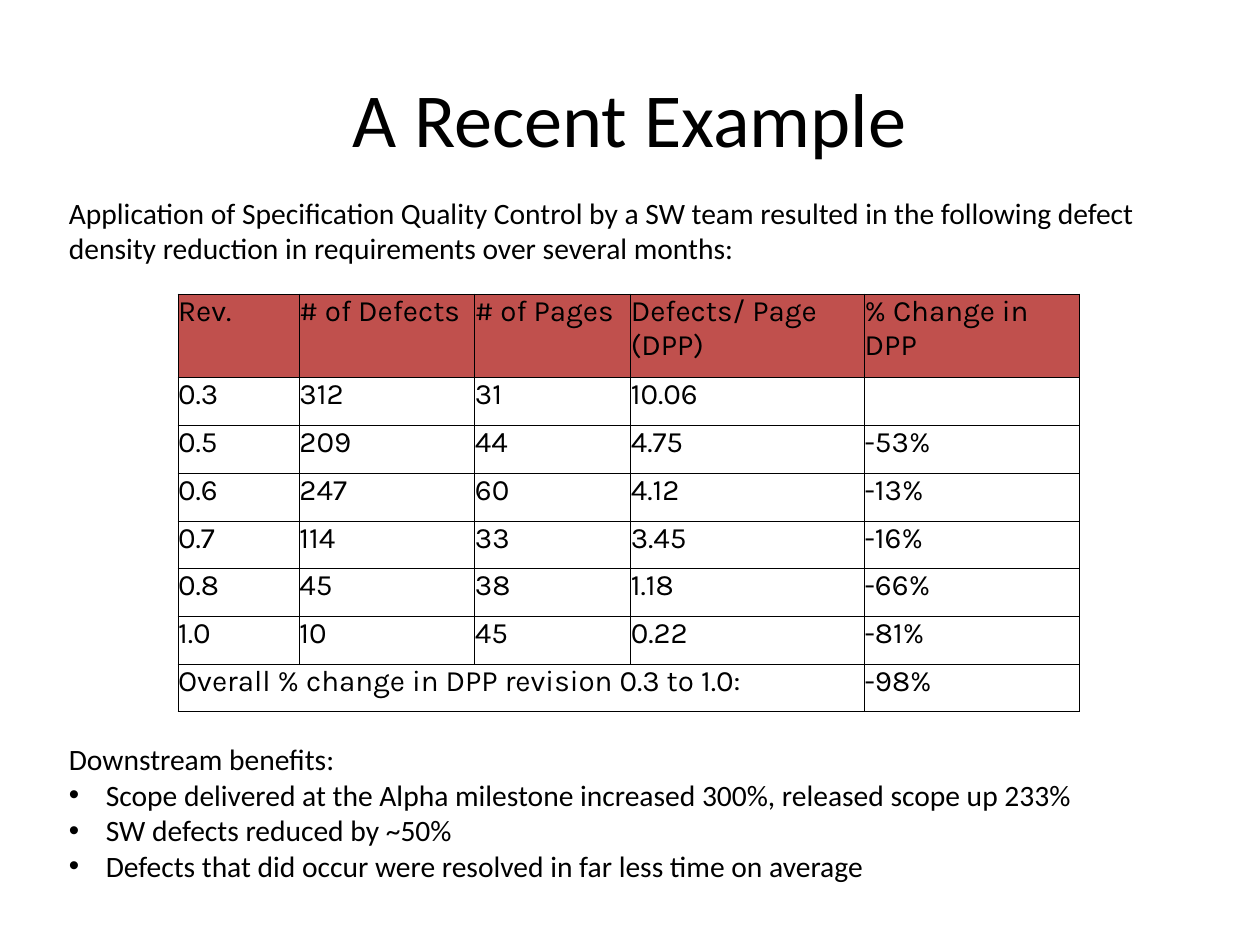
from lxml import etree
from pptx import Presentation
from pptx.dml.color import RGBColor
from pptx.enum import text
from pptx.oxml import ns
from pptx.util import Pt

BLACK = RGBColor(0x00, 0x00, 0x00)
RED = RGBColor(0xC0, 0x50, 0x4D)
WHITE = RGBColor(0xFF, 0xFF, 0xFF)

COLUMN_WIDTHS = [98.6, 142.6, 126.7, 190.1, 174.2]
HEADER_HEIGHT = 68.2
ROW_HEIGHT = 38.78
ROWS = [
    ["Rev.", "# of Defects", "# of Pages", "Defects/ Page (DPP)", "% Change in DPP"],
    ["0.3", "312", "31", "10.06", ""],
    ["0.5", "209", "44", "4.75", "-53%"],
    ["0.6", "247", "60", "4.12", "-13%"],
    ["0.7", "114", "33", "3.45", "-16%"],
    ["0.8", "45", "38", "1.18", "-66%"],
    ["1.0", "10", "45", "0.22", "-81%"],
    ["Overall % change in DPP revision 0.3 to 1.0:", "", "", "", "-98%"],
]
INTRO = ("Application of Specification Quality Control by a SW team resulted in "
         "the following defect density reduction in requirements over several months:")
BENEFITS = [
    "Scope delivered at the Alpha milestone increased 300%, released scope up 233%",
    "SW defects reduced by ~50%",
    "Defects that did occur were resolved in far less time on average",
]


def add_run(p, words, size=24, name="Calibri"):
    r = p.add_run()
    r.text = words
    r.font.size = Pt(size)
    r.font.name = name
    r.font.color.rgb = BLACK


def set_insets(frame, inset):
    frame.margin_left = frame.margin_right = Pt(inset)
    frame.margin_top = frame.margin_bottom = Pt(inset)


def add_bullet(p):
    pPr = p._p.get_or_add_pPr()
    pPr.set("marL", str(Pt(30)))
    pPr.set("indent", str(Pt(-30)))
    etree.SubElement(pPr, ns.qn("a:buFont"), typeface="Arial")
    etree.SubElement(pPr, ns.qn("a:buChar"), char="•")


def set_borders(cell):
    tcPr = cell._tc.get_or_add_tcPr()
    for i, side in enumerate(["lnL", "lnR", "lnT", "lnB"]):
        ln = etree.Element(ns.qn(f"a:{side}"), w=str(Pt(1)))
        fill = etree.SubElement(ln, ns.qn("a:solidFill"))
        etree.SubElement(fill, ns.qn("a:srgbClr"), val=str(BLACK))
        tcPr.insert(i, ln)


def place_title(s, left, top, width, height):
    sp = s.shapes.title
    sp.left, sp.top, sp.width, sp.height = Pt(left), Pt(top), Pt(width), Pt(height)
    tf = sp.text_frame
    set_insets(tf, 5)
    tf.vertical_anchor = text.MSO_ANCHOR.MIDDLE
    p = tf.paragraphs[0]
    p.alignment = text.PP_ALIGN.CENTER
    add_run(p, "A Recent Example", 62)


def add_text(s, left, top, width, height, lead, bullets=()):
    sp = s.shapes.add_textbox(Pt(left), Pt(top), Pt(width), Pt(height))
    tf = sp.text_frame
    tf.word_wrap = True
    tf.auto_size = text.MSO_AUTO_SIZE.SHAPE_TO_FIT_TEXT
    set_insets(tf, 5)
    add_run(tf.paragraphs[0], lead)
    for words in bullets:
        p = tf.add_paragraph()
        add_bullet(p)
        add_run(p, words)


def add_defect_table(s, left, top):
    height = HEADER_HEIGHT + ROW_HEIGHT * (len(ROWS) - 1)
    frame = s.shapes.add_table(len(ROWS), len(COLUMN_WIDTHS), Pt(left), Pt(top),
                               Pt(sum(COLUMN_WIDTHS)), Pt(height))
    table = frame.table
    table.first_row = table.horz_banding = False
    for column, width in zip(table.columns, COLUMN_WIDTHS):
        column.width = Pt(width)
    for i, values in enumerate(ROWS):
        table.rows[i].height = Pt(ROW_HEIGHT if i else HEADER_HEIGHT)
        for j, value in enumerate(values):
            cell = table.cell(i, j)
            set_insets(cell, 0)
            if i:
                cell.fill.background()
            else:
                cell.fill.solid()
                cell.fill.fore_color.rgb = RED
            set_borders(cell)
            if value:
                add_run(cell.text_frame.paragraphs[0], value, name="Karla")
    last = len(ROWS) - 1
    table.cell(last, 0).merge(table.cell(last, 3))


def main():
    prs = Presentation()
    prs.slide_width, prs.slide_height = Pt(1024), Pt(768)
    s = prs.slides.add_slide(prs.slide_layouts[5])
    s.background.fill.solid()
    s.background.fill.fore_color.rgb = WHITE
    place_title(s, 51, 31, 922, 128)
    add_defect_table(s, 144.8, 239)
    add_text(s, 51, 153.5, 888, 66, INTRO)
    add_text(s, 51, 597.5, 930, 122.5, "Downstream benefits:", BENEFITS)
    prs.save("out.pptx")


if __name__ == "__main__":
    main()
